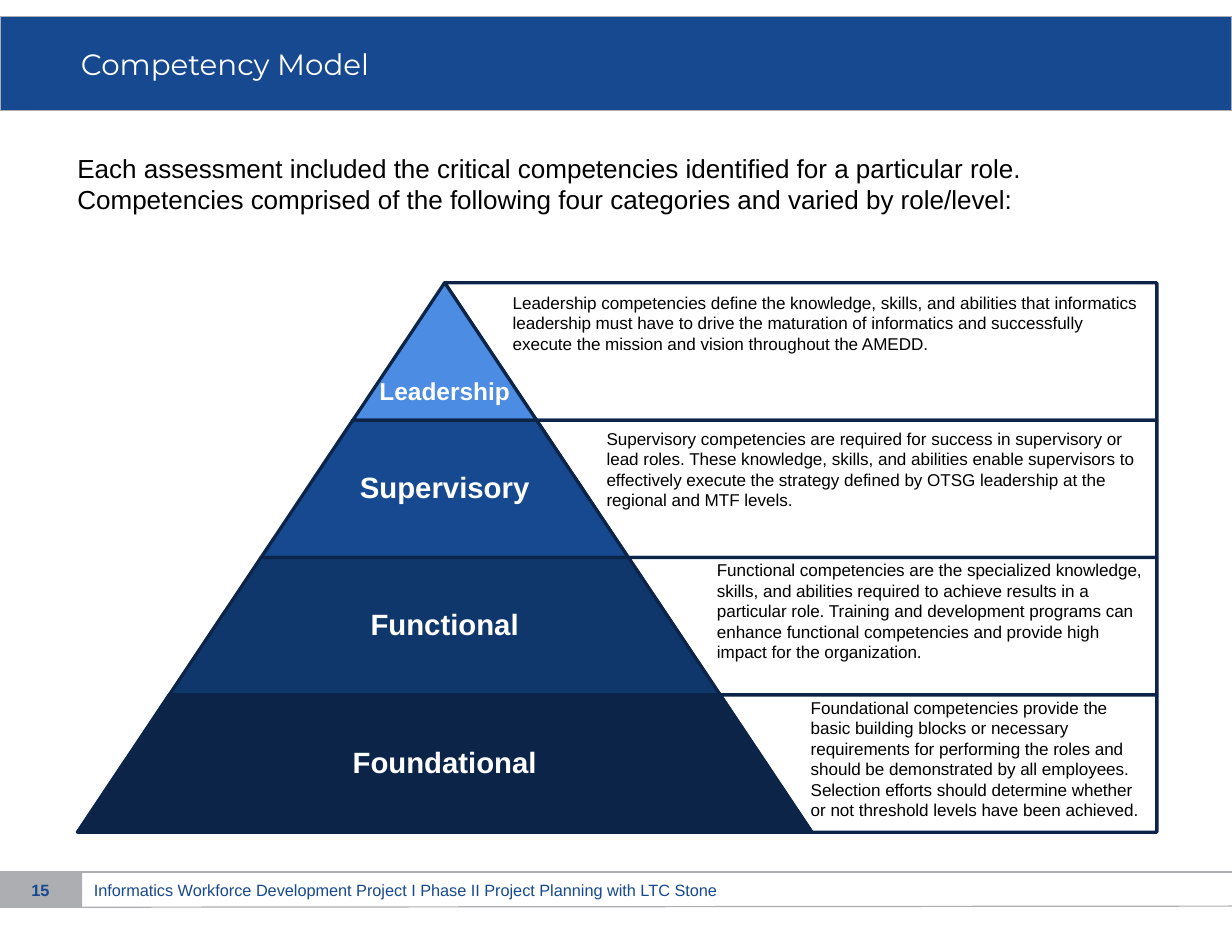
import pptx
import pptx.util
import pptx.dml.color
import pptx.enum.shapes
import pptx.enum.text
import pptx.oxml.ns
import lxml.etree

SHAPE = pptx.enum.shapes.MSO_SHAPE
ALIGN = pptx.enum.text.PP_ALIGN
ANCHOR = pptx.enum.text.MSO_ANCHOR
qn = pptx.oxml.ns.qn

HEX = {"blue": "16498F", "navy": "0B2448", "deep": "10376B", "sky": "4C8CE3",
       "grey": "ACAEB1", "white": "FFFFFF", "black": "000000"}

TITLE = "Competency Model"
INTRO = ("Each assessment included the critical competencies identified for a "
         "particular role. Competencies comprised of the following four "
         "categories and varied by role/level:")
FOOTER = ("Informatics Workforce Development Project I Phase II Project "
          "Planning with LTC Stone")
PAGE = "15"

# name, fill, label size, note box (left, top, width, height), note
TIERS = [
    ("Leadership", "sky", 15, (426, 244, 560, 66),
     "Leadership competencies define the knowledge, skills, and abilities that "
     "informatics leadership must have to drive the maturation of informatics "
     "and successfully execute the mission and vision throughout the AMEDD."),
    ("Supervisory", "blue", 18, (506, 360, 481, 81),
     "Supervisory competencies are required for success in supervisory or lead "
     "roles. These knowledge, skills, and abilities enable supervisors to "
     "effectively execute the strategy defined by OTSG leadership at the "
     "regional and MTF levels."),
    ("Functional", "deep", 18, (600, 472, 389, 99),
     "Functional competencies are the specialized knowledge, skills, and "
     "abilities required to achieve results in a particular role. Training and "
     "development programs can enhance functional competencies and provide "
     "high impact for the organization."),
    ("Foundational", "navy", 18, (680, 589, 307, 117),
     "Foundational competencies provide the basic building blocks or necessary "
     "requirements for performing the roles and should be demonstrated by all "
     "employees. Selection efforts should determine whether or not threshold "
     "levels have been achieved."),
]
MID, TOP, RIGHT = 379, 241, 986   # pyramid axis, apex, right edge of panels
HIGH, STEP = 117, 78.25           # tier height, half-width gained per tier
SLANT = 0.668


def px(n):
    return pptx.util.Emu(round(n * 9144))


def rgb(name):
    return pptx.dml.color.RGBColor.from_string(HEX[name])


def place(shape, box):
    shape.left, shape.top, shape.width, shape.height = map(px, box)


def paint(shape, fill, line=None, width=2):
    shape.fill.solid()
    shape.fill.fore_color.rgb = rgb(fill)
    if line:
        shape.line.color.rgb = rgb(line)
        shape.line.width = pptx.util.Pt(width)
    else:
        shape.line.fill.background()


def write(shape, text, size=10.5, color="black", font="Arial", bold=False,
          align=ALIGN.LEFT, anchor=ANCHOR.TOP, inset=(11, 5, 11, 5), space=1):
    frame = shape.text_frame
    frame.word_wrap = True
    frame.auto_size = pptx.enum.text.MSO_AUTO_SIZE.NONE
    frame.vertical_anchor = anchor
    (frame.margin_left, frame.margin_top,
     frame.margin_right, frame.margin_bottom) = map(px, inset)
    para = frame.paragraphs[0]
    para.alignment, para.line_spacing = align, space
    run = para.add_run()
    run.text = text
    run.font.size, run.font.name = pptx.util.Pt(size), font
    run.font.bold, run.font.color.rgb = bold, rgb(color)
    return para


def note(slide, box, text, **fmt):
    write(slide.shapes.add_textbox(*map(px, box)), text, **fmt)


def draw(slide, kind, box, adjust=(), **look):
    shape = slide.shapes.add_shape(kind, *map(px, box))
    shape.shadow.inherit = False
    for i, value in enumerate(adjust):
        shape.adjustments[i] = value
    paint(shape, **look)
    return shape


def rule(slide, *ends):
    line = slide.shapes.add_connector(
        pptx.enum.shapes.MSO_CONNECTOR.STRAIGHT, *map(px, ends))
    line.line.color.rgb = rgb("grey")
    line.line.width = pptx.util.Pt(0.75)
    lxml.etree.SubElement(line._element.spPr, qn("a:effectLst"))


def head(slide):
    title, body = slide.placeholders
    place(title, (0, 14, 1050, 80))
    paint(title, "blue", "grey", 0.75)
    para = write(title, TITLE, size=18, color="white", font="Montserrat",
                 anchor=ANCHOR.MIDDLE, inset=(0, 5, 11, 5))
    para._p.get_or_add_pPr().set("marL", str(px(69)))
    place(body, (55, 125, 945, 557))
    props = write(body, INTRO, size=16)._p.get_or_add_pPr()
    props.set("marL", "0")
    props.set("indent", "0")
    lxml.etree.SubElement(props, qn("a:buNone"))


def foot(slide):
    draw(slide, SHAPE.RECTANGLE, (0, 743, 70, 30), fill="grey")
    rule(slide, 1050, 772, -2, 773)
    rule(slide, 1050, 743, -1, 743)
    note(slide, (69, 747, 650, 22), FOOTER, size=10, color="blue", space=0.9)
    note(slide, (4, 745, 61, 27), PAGE, size=10, color="blue", bold=True,
         align=ALIGN.CENTER)


def pyramid(slide):
    for i, (name, fill, size, _, _) in enumerate(TIERS):
        y, edge, half = TOP + i * HIGH, MID + i * STEP, (i + 1) * STEP
        panel = draw(slide, SHAPE.NON_ISOSCELES_TRAPEZOID,
                     (edge, y, RIGHT - edge, HIGH), (0, SLANT),
                     fill="white", line="navy")
        panel.rotation = 180
        draw(slide, SHAPE.TRAPEZOID, (MID - half, y, 2 * half, HIGH), (SLANT,),
             fill=fill, line="navy")
        wide = max(2 * STEP, 1.3 * half)
        peak = i == 0
        note(slide, (MID - wide / 2, y, wide, HIGH), name, size=size,
             color="white", bold=True, align=ALIGN.CENTER, space=0.9,
             anchor=ANCHOR.BOTTOM if peak else ANCHOR.MIDDLE,
             inset=(3, 3, 3, 12 if peak else 3))
    for _, _, _, box, text in TIERS:
        note(slide, box, text)


def main():
    deck = pptx.Presentation()
    deck.slide_width, deck.slide_height = px(1050), px(800)
    slide = deck.slides.add_slide(deck.slide_layouts[1])
    head(slide)
    foot(slide)
    pyramid(slide)
    deck.save("out.pptx")


if __name__ == "__main__":
    main()
